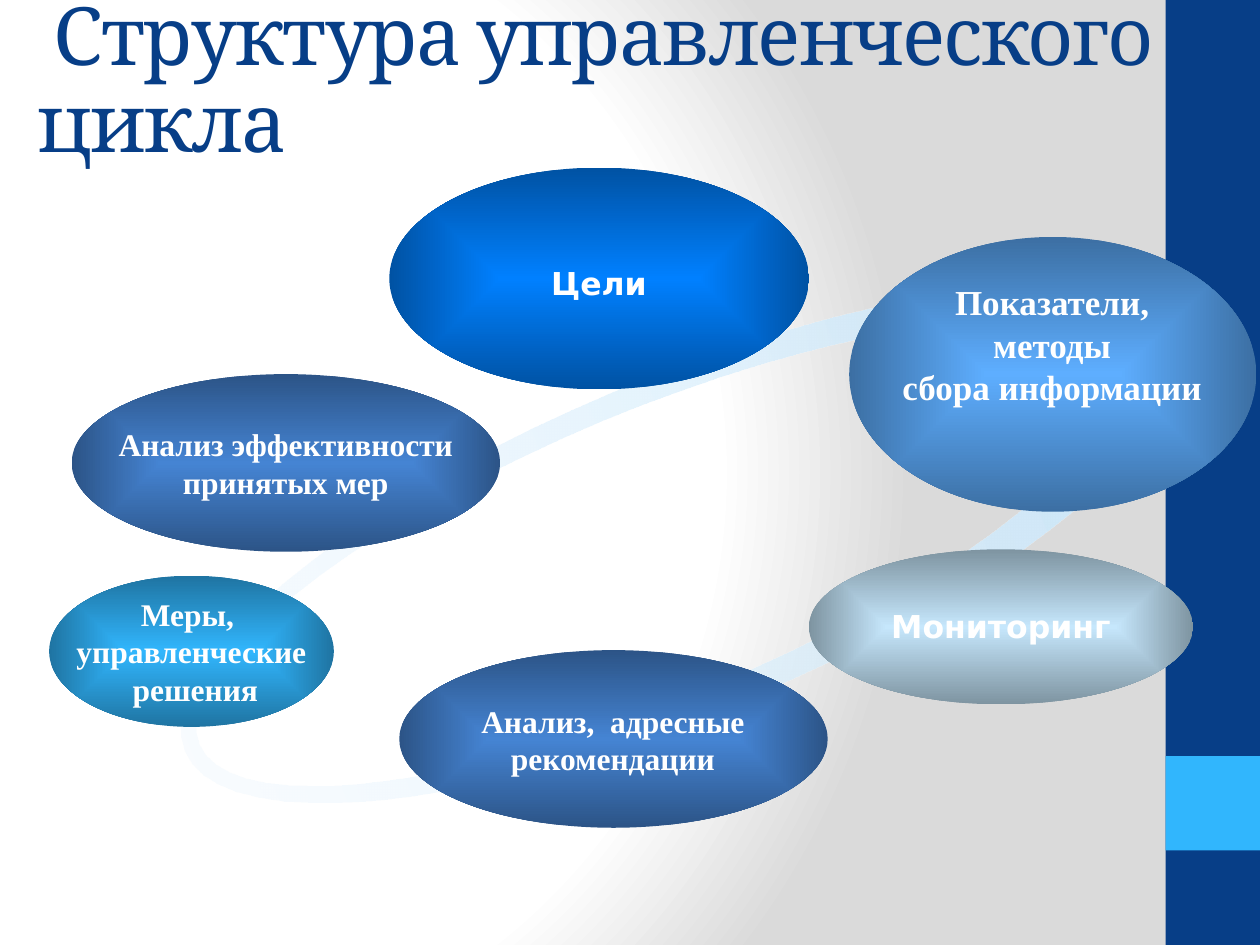
"""Build a slide that shows the stages of the management cycle around a tilted ring."""
from math import cos, pi, sin

from lxml import etree
from pptx import Presentation
from pptx.dml.color import RGBColor
from pptx.enum.shapes import MSO_SHAPE
from pptx.enum.text import MSO_ANCHOR, MSO_AUTO_SIZE, PP_ALIGN
from pptx.oxml.ns import qn
from pptx.util import Pt

RECTANGLE, ELLIPSE = MSO_SHAPE.RECTANGLE, MSO_SHAPE.OVAL
MIDDLE, TOP = MSO_ANCHOR.MIDDLE, MSO_ANCHOR.TOP
LEFT, CENTER = PP_ALIGN.LEFT, PP_ALIGN.CENTER
NO_AUTOFIT = MSO_AUTO_SIZE.NONE

WHITE = RGBColor(0xFF, 0xFF, 0xFF)
GRAY = RGBColor(0xDA, 0xDA, 0xDA)
NAVY = RGBColor(0x07, 0x3E, 0x87)
SKY = RGBColor(0x31, 0xB6, 0xFD)
AZURE = RGBColor(0x00, 0x80, 0xFF)
STEEL = RGBColor(0x45, 0x84, 0xD3)
PALE = RGBColor(0xC6, 0xE7, 0xFC)
MIST = RGBColor(0xF0, 0xF8, 0xFE)
LIGHT = RGBColor(0x5E, 0xAE, 0xFF)

SERIF, SANS = "Times New Roman", "DejaVu Sans"
TITLE = " Структура управленческого цикла"
TITLE_BOX = (14.4, 25.2, 697.7, 44.6)
BARS = [((666, 0, 54, 540), NAVY), ((666, 432, 54, 54), SKY)]

RING_CENTER = (388.8, 311.4)
RING_TURN = -22.6
RING_STEPS = 72
RING_CONTOURS = [((0, 0), (306.4, 95.4)), ((-14.9, -0.7), (282.2, 81.7))]

STAGES = [
    ((222.5, 95.8, 239.8, 126.7), AZURE, []),
    ((28.1, 329, 162.7, 86.4), SKY, ["Меры, ", "управленческие", " решения"]),
    ((228.2, 371.5, 244.8, 101.5), STEEL, []),
    ((462.2, 313.9, 219.6, 88.6), PALE, []),
    ((485.3, 135.4, 232.6, 157), LIGHT, []),
    ((41, 213.8, 244.8, 101.5), STEEL, ["Анализ эффективности", "принятых мер"]),
]
LABELS = [
    ((228.2, 147.6, 228.2, 28.8), ["Цели"], SANS, 18),
    ((506.9, 157, 188.6, 104.4), ["Показатели, методы", "сбора информации"], SERIF, 20),
    ((473, 343.4, 198, 28.8), ["Мониторинг"], SANS, 18),
    ((246.2, 397.4, 208.1, 51.1), ["Анализ,  адресные рекомендации"], SERIF, 18),
]


def place(box):
    return [Pt(length) for length in box]


def set_gradient(holder, stops, path=None, focus=(50, 50, 50, 50)):
    gradient = etree.Element(qn("a:gradFill"), rotWithShape="1")
    stop_list = etree.SubElement(gradient, qn("a:gsLst"))
    for position, color, effects in stops:
        stop = etree.SubElement(stop_list, qn("a:gs"), pos=str(position * 1000))
        tint = etree.SubElement(stop, qn("a:srgbClr"), val=str(color))
        for effect, percent in effects.items():
            etree.SubElement(tint, qn(f"a:{effect}"), val=str(percent * 1000))
    if path:
        shade = etree.SubElement(gradient, qn("a:path"), path=path)
        sides = {side: str(percent * 1000) for side, percent in zip("ltrb", focus)}
        etree.SubElement(shade, qn("a:fillToRect"), **sides)
    else:
        etree.SubElement(gradient, qn("a:lin"), ang="0", scaled="1")
    holder.replace(holder.find(qn("a:noFill")), gradient)


def make_plain(shape):
    shape.shadow.inherit = False
    shape.line.fill.background()
    shape.fill.background()


def write(shape, lines, font, size, anchor, wrap):
    frame = shape.text_frame
    frame.text = "\n".join(lines)
    frame.word_wrap = wrap
    frame.vertical_anchor = anchor
    for para in frame.paragraphs:
        para.alignment = CENTER
        para.font.name, para.font.size = font, Pt(size)
        para.font.bold = True
        para.font.color.rgb = WHITE


def ring_points(offset, radii):
    angles = [2 * pi * step / RING_STEPS for step in range(RING_STEPS)]
    return [tuple(Pt(middle + shift + radius * turn(angle))
                  for middle, shift, radius, turn in zip(RING_CENTER, offset, radii, (cos, sin)))
            for angle in angles]


def add_title(page):
    title = page.shapes.title
    title.left, title.top, title.width, title.height = place(TITLE_BOX)
    frame = title.text_frame
    frame.text = TITLE
    frame.word_wrap = True
    frame.auto_size = NO_AUTOFIT
    frame.vertical_anchor = MIDDLE
    para = frame.paragraphs[0]
    para.alignment = LEFT
    para.line_spacing = 0.9
    span = para.runs[0]
    span.font.name, span.font.size = "Cambria", Pt(46)
    span.font.color.rgb = NAVY
    span.font._element.set("spc", "-100")


def add_ring(page):
    outer, inner = [ring_points(*contour) for contour in RING_CONTOURS]
    builder = page.shapes.build_freeform(*outer[0])
    builder.add_line_segments(outer[1:], close=True)
    builder.move_to(*inner[0])
    builder.add_line_segments(inner[1:], close=True)
    ring = builder.convert_to_shape()
    ring.rotation = RING_TURN
    make_plain(ring)
    set_gradient(ring._element.spPr, [(0, MIST, {"alpha": 36}), (100, PALE, {})])


def main():
    deck = Presentation()
    deck.slide_width, deck.slide_height = Pt(720), Pt(540)
    page = deck.slides.add_slide(deck.slide_layouts[5])
    page.background.fill.background()
    set_gradient(page.element.find(f".//{qn('p:bgPr')}"),
                 [(0, WHITE, {}), (75, WHITE, {}), (100, GRAY, {})],
                 "circle", (20, 50, 100, 50))
    add_title(page)
    for box, color in BARS:
        bar = page.shapes.add_shape(RECTANGLE, *place(box))
        make_plain(bar)
        bar.fill.solid()
        bar.fill.fore_color.rgb = color
    add_ring(page)
    for box, color, lines in STAGES:
        stage = page.shapes.add_shape(ELLIPSE, *place(box))
        make_plain(stage)
        set_gradient(stage._element.spPr,
                     [(0, color, {}), (100, color, {"shade": 36})], "shape")
        if lines:
            write(stage, lines, SERIF, 18, MIDDLE, False)
    for box, lines, font, size in LABELS:
        label = page.shapes.add_textbox(*place(box))
        write(label, lines, font, size, TOP, True)
    deck.save("out.pptx")


if __name__ == "__main__":
    main()
